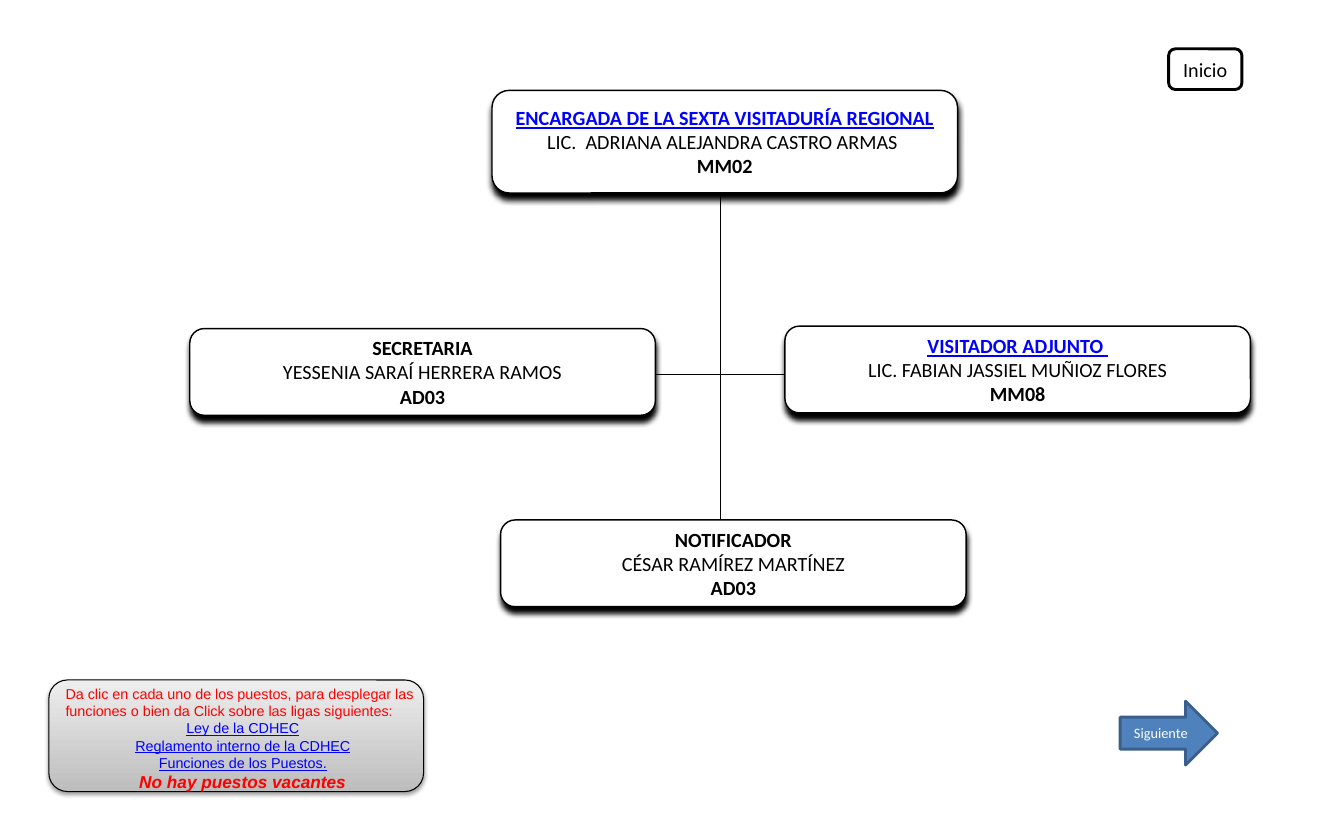
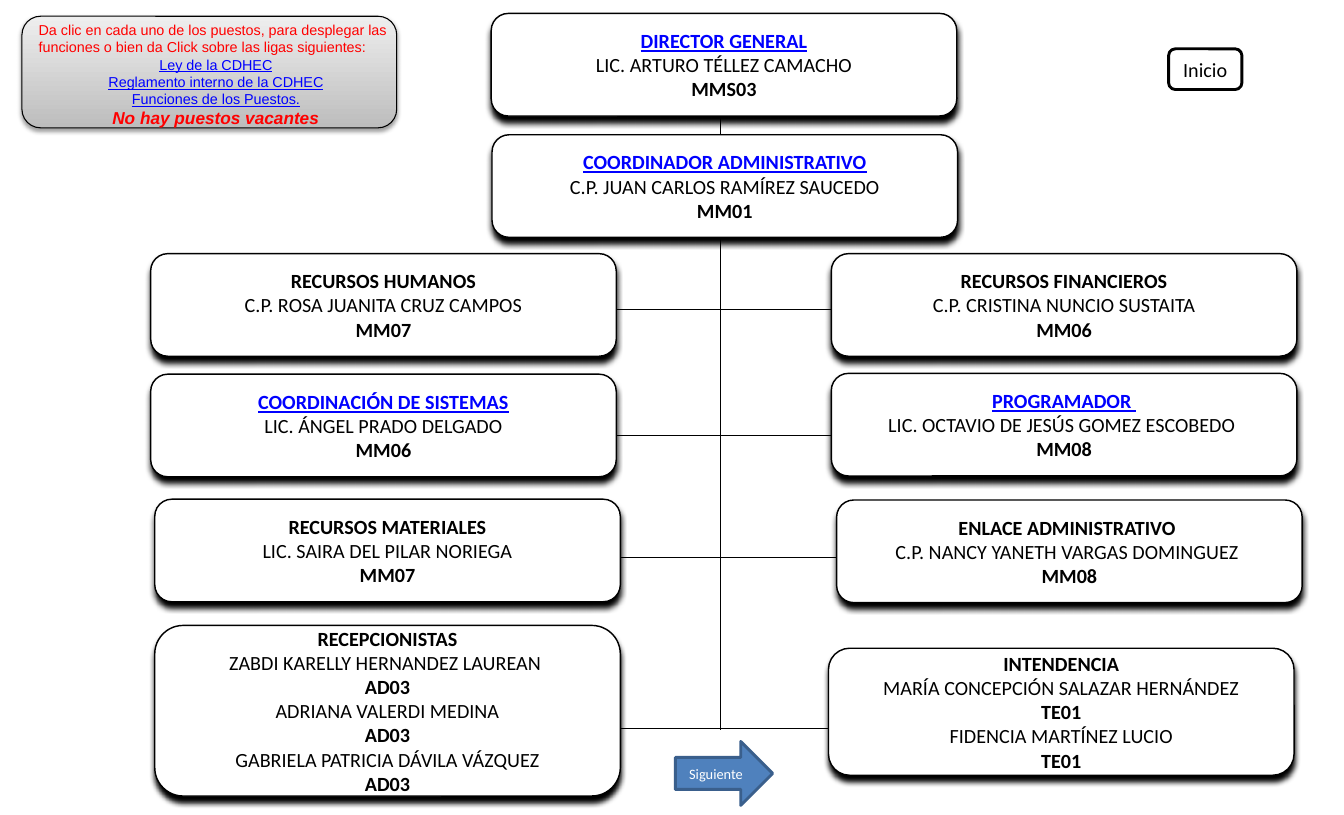
from lxml.etree import SubElement
from pptx import Presentation
from pptx.dml.color import RGBColor
from pptx.enum.shapes import MSO_CONNECTOR as Connector, MSO_SHAPE as Shape
from pptx.enum.text import MSO_ANCHOR as Anchor, PP_ALIGN as Align
from pptx.oxml.ns import qn
from pptx.util import Cm, Pt

CM_PER_INCH = 2.54
SLIDE_WIDTH, SLIDE_HEIGHT = 12.99 * CM_PER_INCH, 7.88 * CM_PER_INCH
BLACK, WHITE, LINK, RED = "000000", "FFFFFF", "0000FF", "FF0000"
ARROW_FILL, ARROW_LINE = "4F81BD", "3A5F8C"
NOTE_DARK, NOTE_LIGHT = "BDBDBD", "EEEEEE"
CARD_WIDTH, CARD_HEIGHT, LOW_CARD_HEIGHT = 11.43, 2.52, 2.13
TRUNK_X = 17.68
NOTE_WIDTH, NOTE_HEIGHT = 9.2, 2.74
NOTE_INTRO = ("Da clic en cada uno de los puestos, para desplegar las "
              "funciones o bien da Click sobre las ligas siguientes:")
NOTE_LINKS = ["Ley de la CDHEC", "Reglamento interno de la CDHEC",
              "Funciones de los Puestos."]

REGIONAL_CARDS = [
    (12.08, 2.22, CARD_HEIGHT, True,
     ["ENCARGADA DE LA SEXTA VISITADURÍA REGIONAL",
      "LIC.  ADRIANA ALEJANDRA CASTRO ARMAS ", "MM02"]),
    (4.66, 8.07, LOW_CARD_HEIGHT, False,
     ["SECRETARIA", "YESSENIA SARAÍ HERRERA RAMOS", "AD03"]),
    (12.29, 12.77, LOW_CARD_HEIGHT, False,
     ["NOTIFICADOR", "CÉSAR RAMÍREZ MARTÍNEZ", "AD03"]),
    (19.27, 8.01, LOW_CARD_HEIGHT, True,
     ["VISITADOR ADJUNTO ", "LIC. FABIAN JASSIEL MUÑIOZ FLORES", "MM08"]),
]
ADMINISTRATION_CARDS = [
    (12.06, 0.33, CARD_HEIGHT, True,
     ["DIRECTOR GENERAL", "LIC. ARTURO TÉLLEZ CAMACHO", "MMS03"]),
    (12.08, 3.31, CARD_HEIGHT, True,
     ["COORDINADOR ADMINISTRATIVO", "C.P. JUAN CARLOS RAMÍREZ SAUCEDO", "MM01"]),
    (3.7, 6.23, CARD_HEIGHT, False,
     ["RECURSOS HUMANOS", "C.P. ROSA JUANITA CRUZ CAMPOS", "MM07"]),
    (20.41, 6.23, CARD_HEIGHT, False,
     ["RECURSOS FINANCIEROS", "C.P. CRISTINA NUNCIO SUSTAITA", "MM06"]),
    (3.7, 9.19, CARD_HEIGHT, True,
     ["COORDINACIÓN DE SISTEMAS", "LIC. ÁNGEL PRADO DELGADO", "MM06"]),
    (20.41, 9.17, CARD_HEIGHT, True,
     ["PROGRAMADOR ", "LIC. OCTAVIO DE JESÚS GOMEZ ESCOBEDO ", "MM08"]),
    (3.8, 12.26, CARD_HEIGHT, False,
     ["RECURSOS MATERIALES", "LIC. SAIRA DEL PILAR NORIEGA", "MM07"]),
    (20.54, 12.28, CARD_HEIGHT, False,
     ["ENLACE ADMINISTRATIVO ", "C.P. NANCY YANETH VARGAS DOMINGUEZ ", "MM08"]),
    (3.8, 15.36, 4.19, False,
     ["RECEPCIONISTAS", "ZABDI KARELLY HERNANDEZ LAUREAN ", "AD03",
      "ADRIANA VALERDI MEDINA", "AD03", "GABRIELA PATRICIA DÁVILA VÁZQUEZ", "AD03"]),
    (20.34, 15.92, 3.12, False,
     ["INTENDENCIA", "MARÍA CONCEPCIÓN SALAZAR HERNÁNDEZ", "TE01",
      "FIDENCIA MARTÍNEZ LUCIO", "TE01"]),
]


def color(value):
    """Turn a hex string into a colour."""
    return RGBColor.from_string(value)


def add_text(frame, lines, font_name="Calibri"):
    """Write (text, size, colour, bold, underline, italic, alignment) lines."""
    for index, (text, size, ink, bold, underline, italic, align) in enumerate(lines):
        paragraph = frame.paragraphs[0] if index == 0 else frame.add_paragraph()
        paragraph.alignment = align
        run = paragraph.add_run()
        run.text = text
        font = run.font
        font.name, font.size, font.color.rgb = font_name, Pt(size), color(ink)
        font.bold, font.underline, font.italic = bold, underline, italic


def text_line(text, size, ink=BLACK, bold=False, underline=False,
              italic=False, align=Align.CENTER):
    """Describe one line of text."""
    return text, size, ink, bold, underline, italic, align


def add_box(slide, kind, left, top, width, height, line_width,
            fill=WHITE, line=BLACK):
    """Add a flat outlined shape."""
    shape = slide.shapes.add_shape(kind, Cm(left), Cm(top), Cm(width), Cm(height))
    shape.shadow.inherit = False
    shape.fill.solid()
    shape.fill.fore_color.rgb = color(fill)
    shape.line.color.rgb = color(line)
    shape.line.width = Pt(line_width)
    frame = shape.text_frame
    frame.word_wrap = False
    frame.vertical_anchor = Anchor.MIDDLE
    return shape


def add_shadow(shape, blur, distance, opacity):
    """Give a shape a black shadow that falls straight down."""
    effects = shape._element.spPr.find(qn("a:effectLst"))
    shadow = SubElement(effects, qn("a:outerShdw"), blurRad=str(Pt(blur)),
                        dist=str(Pt(distance)), dir="5400000", rotWithShape="0")
    ink = SubElement(shadow, qn("a:srgbClr"), val=BLACK)
    SubElement(ink, qn("a:alpha"), val=str(opacity * 1000))


def add_line(slide, start_x, start_y, end_x, end_y):
    """Add a thin black line of the chart."""
    line = slide.shapes.add_connector(
        Connector.STRAIGHT, Cm(start_x), Cm(start_y), Cm(end_x), Cm(end_y))
    line.line.color.rgb = color(BLACK)
    line.line.width = Pt(0.75)
    SubElement(line._element.spPr, qn("a:effectLst"))


def add_card(slide, left, top, height, linked, texts):
    """Add a post with its people and their levels."""
    card = add_box(slide, Shape.ROUNDED_RECTANGLE, left, top, CARD_WIDTH, height, 1)
    add_shadow(card, 4, 4, 100)
    frame = card.text_frame
    frame.margin_left = frame.margin_right = Cm(0.43)
    frame.margin_top = frame.margin_bottom = Cm(0.23)
    title, *details = texts
    lines = [text_line(title, 14, LINK if linked else BLACK, True, linked)]
    lines += [text_line(text, 14, bold=index % 2 == 1)
              for index, text in enumerate(details)]
    add_text(frame, lines)


def add_note(slide, left, top):
    """Add the grey box of instructions."""
    panel = add_box(slide, Shape.ROUNDED_RECTANGLE, left, top,
                    NOTE_WIDTH, NOTE_HEIGHT, 0.75)
    panel.fill.gradient()
    panel.fill.gradient_angle = 90
    stops = zip(panel.fill.gradient_stops, (NOTE_DARK, NOTE_LIGHT), (0, 1))
    for stop, shade, position in stops:
        stop.color.rgb = color(shade)
        stop.position = position
    add_shadow(panel, 3.1, 1.6, 38)
    box = slide.shapes.add_textbox(Cm(left + 0.16), Cm(top), Cm(NOTE_WIDTH), Cm(2.9))
    box.text_frame.word_wrap = True
    lines = [text_line(NOTE_INTRO, 10, RED, align=Align.LEFT)]
    lines += [text_line(text, 10, LINK, underline=True) for text in NOTE_LINKS]
    lines.append(text_line("No hay puestos vacantes", 12, RED, True, italic=True))
    add_text(box.text_frame, lines, "Arial")


def add_navigation(slide, arrow_left, arrow_top):
    """Add the start button and the next arrow."""
    button = add_box(slide, Shape.ROUNDED_RECTANGLE, 28.69, 1.2, 1.8, 1, 2)
    add_text(button.text_frame, [text_line("Inicio", 14)])
    arrow = add_box(slide, Shape.RIGHT_ARROW, arrow_left, arrow_top, 2.39, 1.57, 2,
                    ARROW_FILL, ARROW_LINE)
    add_text(arrow.text_frame, [text_line("Siguiente", 10, WHITE)])


def add_chart_slide(presentation, lines, cards, note_at, arrow_at):
    """Build one organisation chart slide."""
    slide = presentation.slides.add_slide(presentation.slide_layouts[6])
    for line in lines:
        add_line(slide, *line)
    for card in cards:
        add_card(slide, *card)
    add_note(slide, *note_at)
    add_navigation(slide, *arrow_at)


def main():
    """Build and save the presentation."""
    presentation = Presentation()
    presentation.slide_width = Cm(SLIDE_WIDTH)
    presentation.slide_height = Cm(SLIDE_HEIGHT)
    regional_lines = [(TRUNK_X, 4.8, TRUNK_X, 12.78), (15.09, 9.19, 19.3, 9.19)]
    add_chart_slide(presentation, regional_lines, REGIONAL_CARDS,
                    (1.2, 16.7), (27.5, 17.22))
    administration_lines = [(TRUNK_X, 2.84, TRUNK_X, 17.93)]
    administration_lines += [(14.7, y, 20.55, y) for y in (7.59, 10.69, 13.7, 17.89)]
    add_chart_slide(presentation, administration_lines, ADMINISTRATION_CARDS,
                    (0.54, 0.4), (16.58, 18.21))
    presentation.save("out.pptx")


if __name__ == "__main__":
    main()
